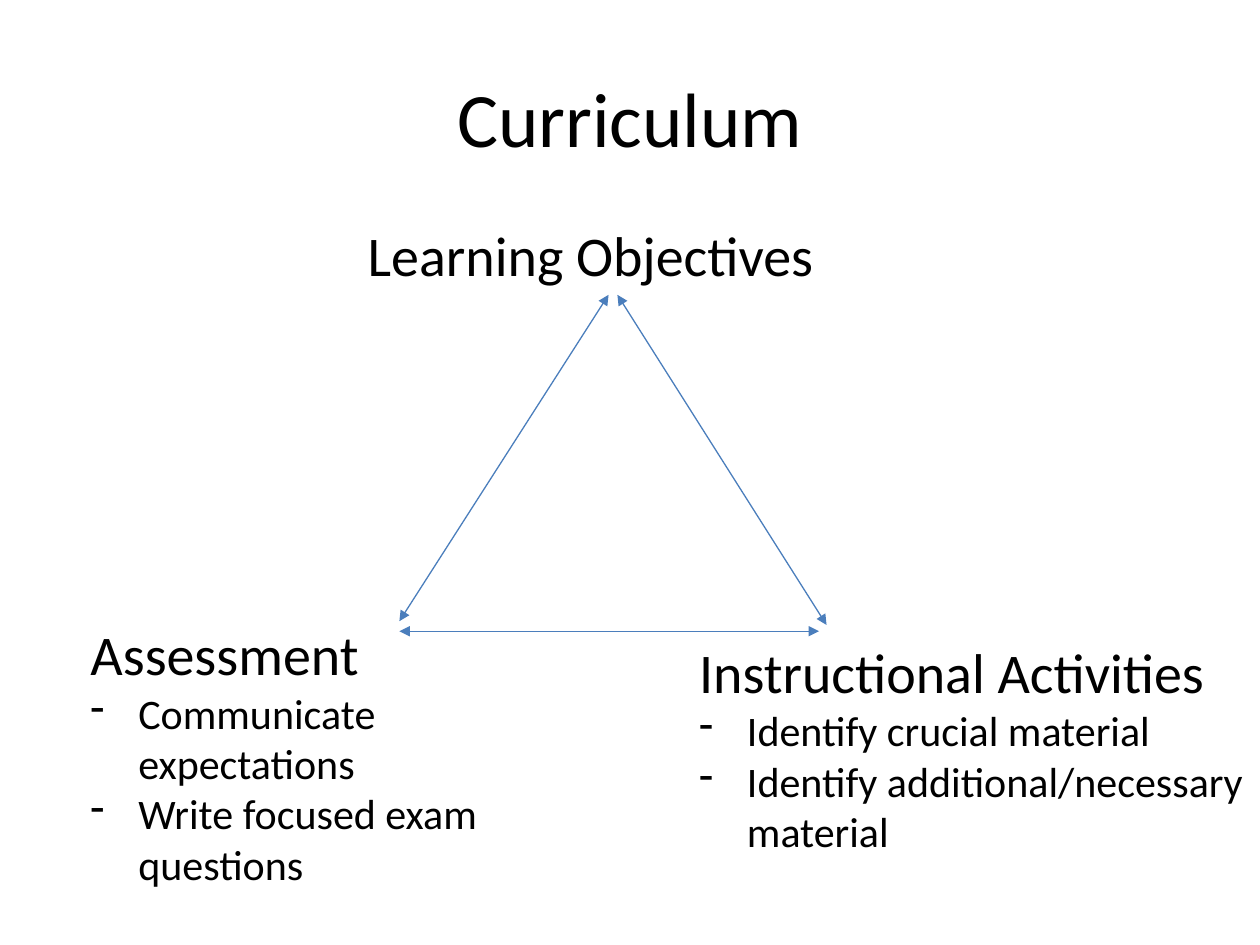
from pptx import Presentation, util as u
from pptx.dml.color import RGBColor
from pptx.enum import shapes, text
from pptx.oxml.ns import qn
from lxml import etree

THEME = {
    "font": "Calibri",
    "ink": RGBColor.from_string("000000"),
    "line": RGBColor.from_string("4B7EBC"),
    "title": u.Pt(44),
    "head": u.Pt(32),
    "item": u.Pt(24),
    "weight": u.Pt(0.75),
}

prs = Presentation()
prs.slide_width, prs.slide_height = u.Inches(10), u.Inches(7.5)
COL, ROW = prs.slide_width / 100, prs.slide_height / 75


def grid(left, top, width, height):
    return [round(v * unit) for v, unit in zip((left, top, width, height), (COL, ROW) * 2)]


def write(p, words, size):
    r = p.add_run()
    r.text = words
    for name, value in {"name": THEME["font"], "size": THEME[size]}.items():
        setattr(r.font, name, value)
    r.font.color.rgb = THEME["ink"]


s = prs.slides.add_slide(prs.slide_layouts[5])
title = s.shapes.title
for name, value in zip(("left", "top", "width", "height"), grid(5, 3, 90, 12.5)):
    setattr(title, name, value)
title.text_frame.vertical_anchor = text.MSO_ANCHOR.MIDDLE
p = title.text_frame.paragraphs[0]
p.alignment = text.PP_ALIGN.CENTER
write(p, "Curriculum", "title")

corners = [
    ((28.2, 17, 41.6, 6.4), False, "Learning Objectives", []),
    ((6.2, 48.7, 37, 25.6), True, "Assessment",
     ["Communicate expectations", "Write focused exam questions"]),
    ((54.5, 50.1, 45.9, 27.9), True, "Instructional Activities",
     ["Identify crucial material", "Identify additional/necessary material"]),
]
boxes = []
for place, wrap, heading, items in corners:
    sp = s.shapes.add_textbox(*grid(*place))
    tf = sp.text_frame
    for name, value in {"word_wrap": wrap,
                        "auto_size": text.MSO_AUTO_SIZE.SHAPE_TO_FIT_TEXT}.items():
        setattr(tf, name, value)
    write(tf.paragraphs[0], heading, "head")
    for item in items:
        p = tf.add_paragraph()
        pPr = p._p.get_or_add_pPr()
        pPr.set("marL", str(u.Inches(0.38)))
        pPr.set("indent", str(-u.Inches(0.38)))
        etree.SubElement(pPr, qn("a:buFontTx"))
        etree.SubElement(pPr, qn("a:buChar")).set("char", "-")
        write(p, item, "item")
    boxes.append(sp)

sides = [
    ((31.7, 49.3, 48.3, 23.4), None),
    ((65.6, 49.6, 49, 23.4), boxes[0]),
    ((31.7, 50.1, 65, 50.1), None),
]
for ends, target in sides:
    cx = s.shapes.add_connector(shapes.MSO_CONNECTOR.STRAIGHT, *grid(*ends))
    if target is not None:
        cx.end_connect(target, 2)
    cx.line.color.rgb = THEME["line"]
    cx.line.width = THEME["weight"]
    ln = cx.line._get_or_add_ln()
    for tag in ("a:headEnd", "a:tailEnd"):
        etree.SubElement(ln, qn(tag)).set("type", "triangle")
    etree.SubElement(cx._element.spPr, qn("a:effectLst"))

prs.save("out.pptx")
